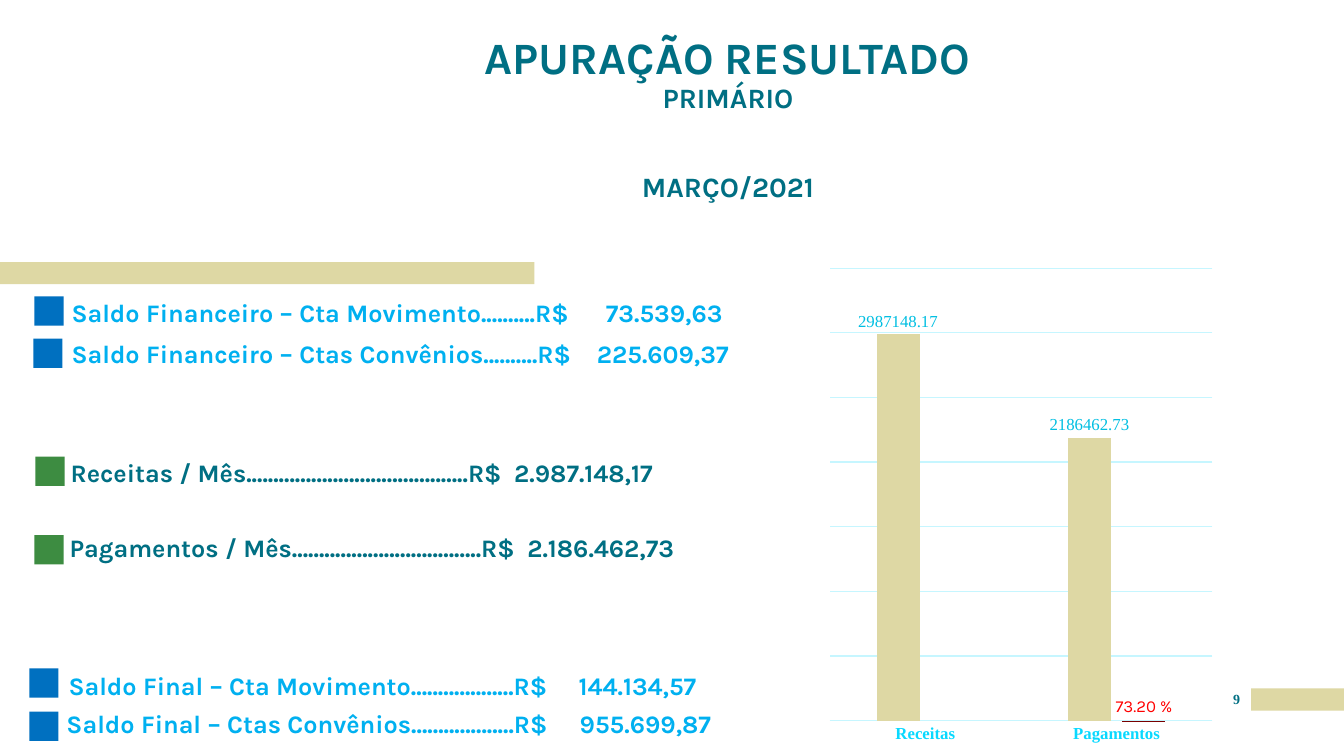
from lxml.etree import SubElement
from pptx import Presentation
from pptx.chart.data import CategoryChartData
from pptx.dml.color import RGBColor
from pptx.enum.chart import XL_CHART_TYPE, XL_LABEL_POSITION, XL_TICK_MARK
from pptx.enum.shapes import MSO_SHAPE
from pptx.enum.text import MSO_ANCHOR, PP_ALIGN
from pptx.oxml.ns import qn
from pptx.util import Inches, Pt

TEAL, CYAN, BLUE, GREEN, SAND = "006F83", "00B0F0", "0070C0", "3D8C41", "DED8A4"
GRID, AXIS_TEXT, VALUE_TEXT = "C6F6FF", "09D9FF", "00BFE2"
SANS, SERIF = "Karla", "Times New Roman"


def color(value):
    """Turn a hex string into a colour."""
    return RGBColor.from_string(value)


def set_font(font, size, tint, name=SANS, bold=True):
    """Apply the size, colour, typeface and weight to a font."""
    font.size, font.name, font.bold = Pt(size), name, bold
    font.color.rgb = color(tint)


def add_text(para, text, size=18, tint=TEAL, name=SANS, align=PP_ALIGN.LEFT, line=0.9, before=0, tab=None):
    """Write one formatted span, with an optional tab stop in inches."""
    span = para.add_run()
    span.text = text
    set_font(span.font, size, tint, name)
    para.alignment, para.line_spacing, para.space_before = align, line, Pt(before)
    if tab:
        stops = SubElement(para._p.get_or_add_pPr(), qn("a:tabLst"))
        SubElement(stops, qn("a:tab"), pos=str(Inches(tab)), algn="l")


class ReportPage:
    """Hold the current slide and draw the report elements on it."""

    def __init__(self, deck):
        """Start a page on the title-only layout."""
        self.page = deck.slides.add_slide(deck.slide_layouts[5])

    def prepare(self, frame, anchor, bottom=0):
        """Set the wrapping, anchor and insets of a text frame."""
        frame.word_wrap, frame.vertical_anchor = True, anchor
        frame.margin_left = frame.margin_top = frame.margin_right = 0
        frame.margin_bottom = Inches(bottom)
        return frame

    def title(self, place, lines):
        """Fill the title with (text, size, space before) lines."""
        box = self.page.shapes.title
        box.left, box.top, box.width, box.height = map(Inches, place)
        frame = self.prepare(box.text_frame, MSO_ANCHOR.BOTTOM, 0.34)
        for index, (text, size, before) in enumerate(lines):
            para = frame.add_paragraph() if index else frame.paragraphs[0]
            add_text(para, text, size, align=PP_ALIGN.CENTER, before=before)

    def block(self, place, fill):
        """Draw a plain filled rectangle."""
        box = self.page.shapes.add_shape(MSO_SHAPE.RECTANGLE, *map(Inches, place))
        box.shadow.inherit = False
        box.fill.solid()
        box.fill.fore_color.rgb = color(fill)
        box.line.fill.background()

    def text(self, place, text, anchor=MSO_ANCHOR.BOTTOM, **style):
        """Place a text box with one paragraph."""
        box = self.page.shapes.add_textbox(*map(Inches, place))
        add_text(self.prepare(box.text_frame, anchor).paragraphs[0], text, **style)

    def chart(self, place, categories, series, top, step, plot_area):
        """Draw clustered columns from (name, values, fill, label style) series."""
        data = CategoryChartData()
        data.categories = categories
        for name, values, _, _ in series:
            data.add_series(name, values)
        chart = self.page.shapes.add_chart(XL_CHART_TYPE.COLUMN_CLUSTERED, *map(Inches, place), data).chart
        chart.has_legend = chart.has_title = False
        set_font(chart.font, 10, TEAL, SERIF, False)
        plot = chart.plots[0]
        plot.gap_width, plot.overlap, plot.vary_by_categories = 219, -27, False
        for bars, (_, _, fill, style) in zip(plot.series, series):
            bars.format.fill.solid()
            bars.format.fill.fore_color.rgb = color(fill)
            labels = bars.data_labels
            labels.show_value, labels.position = True, XL_LABEL_POSITION.OUTSIDE_END
            tint, font, number_format = style
            set_font(labels.font, 12, tint, font, False)
            labels.number_format, labels.number_format_is_linked = number_format, False
        self.axes(chart, top, step)
        self.place_plot(chart, plot_area)

    def axes(self, chart, top, step):
        """Format the category axis, hidden value axis and gridlines."""
        values, names = chart.value_axis, chart.category_axis
        values.minimum_scale, values.maximum_scale, values.major_unit = 0, top, step
        values.visible, values.has_major_gridlines = False, True
        names.major_tick_mark = XL_TICK_MARK.NONE
        set_font(names.tick_labels.font, 12, AXIS_TEXT, SERIF)
        for line in (values.major_gridlines.format.line, names.format.line):
            line.color.rgb, line.width = color(GRID), Pt(0.75)

    def place_plot(self, chart, fractions):
        """Fix the inner plot area as fractions of the chart."""
        area = chart._chartSpace.chart.plotArea
        for layout in area.findall(qn("c:layout")):
            area.remove(layout)
        layout = area.makeelement(qn("c:layout"), {})
        area.insert(0, layout)
        manual = SubElement(layout, qn("c:manualLayout"))
        settings = [("layoutTarget", "inner"), ("xMode", "edge"), ("yMode", "edge")]
        for tag, value in settings + list(zip("xywh", fractions)):
            SubElement(manual, qn(f"c:{tag}"), val=str(value))


def main():
    """Build the monthly result slide."""
    deck = Presentation()
    deck.slide_width, deck.slide_height = Inches(13.33), Inches(7.5)
    report = ReportPage(deck)
    report.block((12.41, 6.83, 0.92, 0.22), SAND)
    report.block((0, 2.6, 5.3, 0.22), SAND)
    report.title((4.05, 0.11, 6.34, 2.25),
                 [("APURAÇÃO RESULTADO", 32, 0), ("PRIMÁRIO", 20, 0), ("MARÇO/2021", 20, 42)])

    rows = [
        (0.34, 2.94, BLUE, (0.71, 2.87, 8.06, 0.38), CYAN,
         "Saldo Financeiro – Cta Movimento..........R$\t73.539,63", 5.3),
        (0.33, 3.36, BLUE, (0.71, 3.28, 7.79, 0.38), CYAN,
         "Saldo Financeiro – Ctas Convênios..........R$\t225.609,37", 5.21),
        (0.35, 4.53, GREEN, (0.7, 4.46, 7.32, 0.38), TEAL,
         "Receitas / Mês.........................................R$\t2.987.148,17", 4.4),
        (0.34, 5.31, GREEN, (0.69, 5.2, 7.4, 0.38), TEAL,
         "Pagamentos / Mês...................................R$\t2.186.462,73", 4.54),
        (0.29, 6.63, BLUE, (0.68, 6.5, 7.43, 0.45), CYAN,
         "Saldo Final – Cta Movimento...................R$\t144.134,57", 5.06),
        (0.29, 7.06, BLUE, (0.66, 6.95, 7.73, 0.38), CYAN,
         "Saldo Final – Ctas Convênios...................R$\t955.699,87", 5.09),
    ]
    for left, top, fill, place, tint, text, tab in rows:
        report.block((left, top, 0.29, 0.29), fill)
        report.text(place, text, tint=tint, before=6, tab=tab)

    report.chart((7.44, 2.51, 4.93, 4.99), ["Receitas", "Pagamentos"],
                 [("Series 1", (2987148.17, 2186462.73), SAND, (VALUE_TEXT, SERIF, "General")),
                  ("Series 2", (None, 73.2), "790000", ("FF0000", SANS, '0.00" %"'))],
                 3500000, 500000, (0.16, 0.03, 0.77, 0.9))
    report.text((12.12, 6.85, 0.29, 0.25), "9", MSO_ANCHOR.TOP, size=10, name=SERIF,
                align=PP_ALIGN.CENTER, line=1)
    deck.save("out.pptx")


if __name__ == "__main__":
    main()
